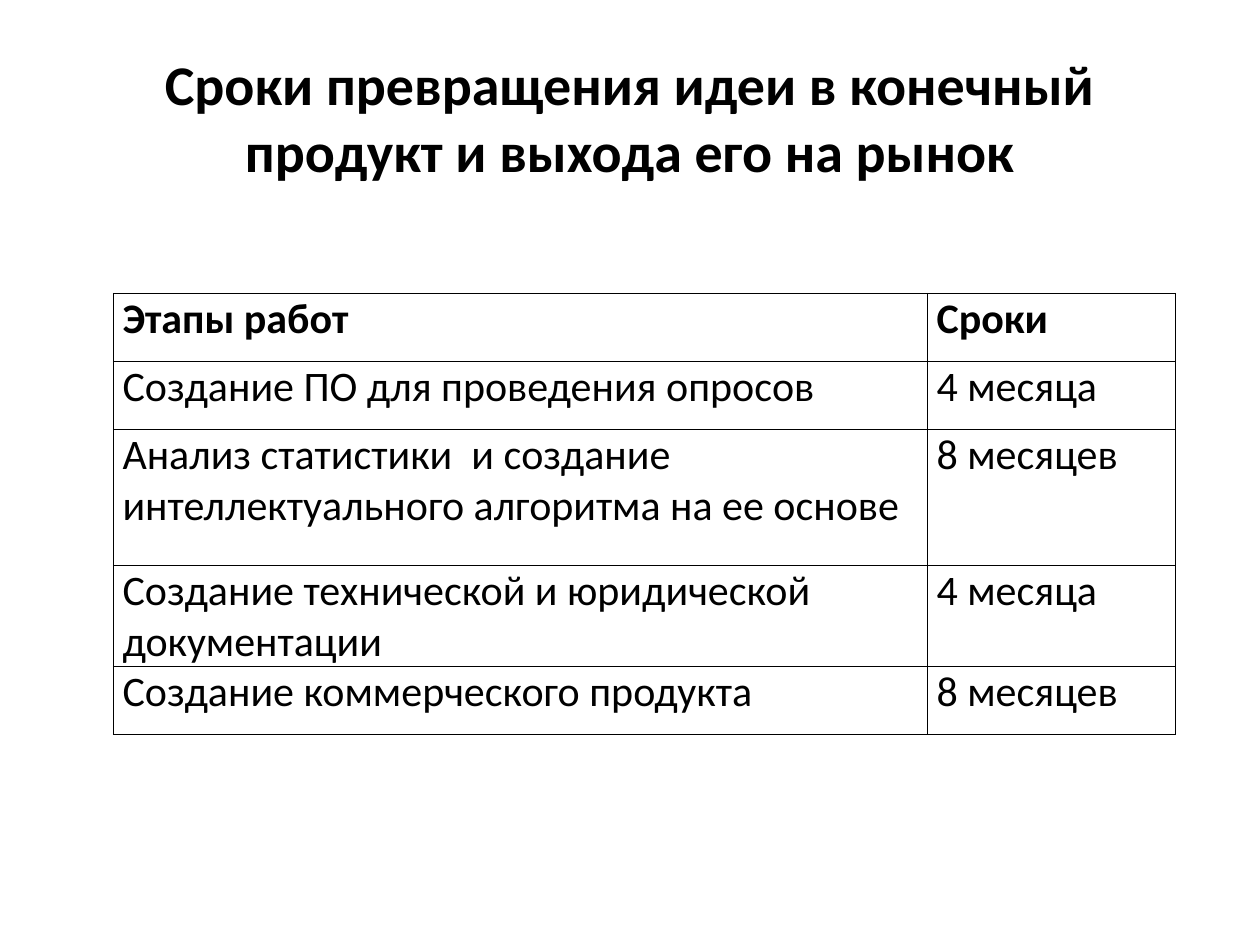
from lxml import etree
from pptx import Presentation
from pptx import util as u
from pptx.dml import color
from pptx.enum import text
from pptx.oxml import ns

COLORS = {"ink": "000000", "page": "FFFFFF"}
TITLE = "Сроки превращения идеи в конечный продукт и выхода его на рынок"
STAGES = [
    ("Этапы работ", "Сроки"),
    ("Создание ПО для проведения опросов", "4 месяца"),
    ("Анализ статистики  и создание интеллектуального алгоритма на ее основе", "8 месяцев"),
    ("Создание технической и юридической документации", "4 месяца"),
    ("Создание коммерческого продукта", "8 месяцев"),
]
COLUMN_WIDTHS = [16.41, 5]
ROW_HEIGHTS = [1.37, 1.37, 2.74, 2.03, 1.37]


def set_values(target, values):
    for name, value in values.items():
        setattr(target, name, value)


def write_text(para, content, size, bold):
    span = para.add_run()
    span.text = content
    set_values(span.font, {"name": "Calibri", "size": u.Pt(size), "bold": bold})
    span.font.color.rgb = color.RGBColor.from_string(COLORS["ink"])


def add_title(page):
    box = page.shapes.add_textbox(u.Cm(1.27), u.Cm(0.76), u.Cm(22.86), u.Cm(3.18))
    frame = box.text_frame
    set_values(frame, {"word_wrap": True, "vertical_anchor": text.MSO_ANCHOR.MIDDLE})
    para = frame.paragraphs[0]
    para.alignment = text.PP_ALIGN.CENTER
    write_text(para, TITLE, 32, True)


def add_borders(cell):
    properties = cell._tc.get_or_add_tcPr()
    for side in ("lnL", "lnR", "lnT", "lnB"):
        line = etree.SubElement(properties, ns.qn(f"a:{side}"), w=str(u.Pt(1)))
        fill = etree.SubElement(line, ns.qn("a:solidFill"))
        etree.SubElement(fill, ns.qn("a:srgbClr"), val=COLORS["ink"])


def fill_cell(cell, content, bold):
    set_values(cell, {
        "margin_left": u.Cm(0.18), "margin_right": u.Cm(0.18),
        "margin_top": 0, "margin_bottom": 0,
    })
    add_borders(cell)
    cell.fill.background()
    write_text(cell.text_frame.paragraphs[0], content, 24, bold)


def add_schedule(page):
    frame = page.shapes.add_table(
        len(STAGES), len(COLUMN_WIDTHS), u.Cm(2.29), u.Cm(5.92),
        u.Cm(sum(COLUMN_WIDTHS)), u.Cm(sum(ROW_HEIGHTS)))
    table = frame.table
    table.horz_banding = False
    for column, width in zip(table.columns, COLUMN_WIDTHS):
        column.width = u.Cm(width)
    for row, height in zip(table.rows, ROW_HEIGHTS):
        row.height = u.Cm(height)
    for r, stage in enumerate(STAGES):
        for c, content in enumerate(stage):
            fill_cell(table.cell(r, c), content, r == 0)


def main():
    deck = Presentation()
    set_values(deck, {"slide_width": u.Cm(25.4), "slide_height": u.Cm(19.05)})
    page = deck.slides.add_slide(deck.slide_layouts[6])
    page.background.fill.solid()
    page.background.fill.fore_color.rgb = color.RGBColor.from_string(COLORS["page"])
    add_title(page)
    add_schedule(page)
    deck.save("out.pptx")


if __name__ == "__main__":
    main()
